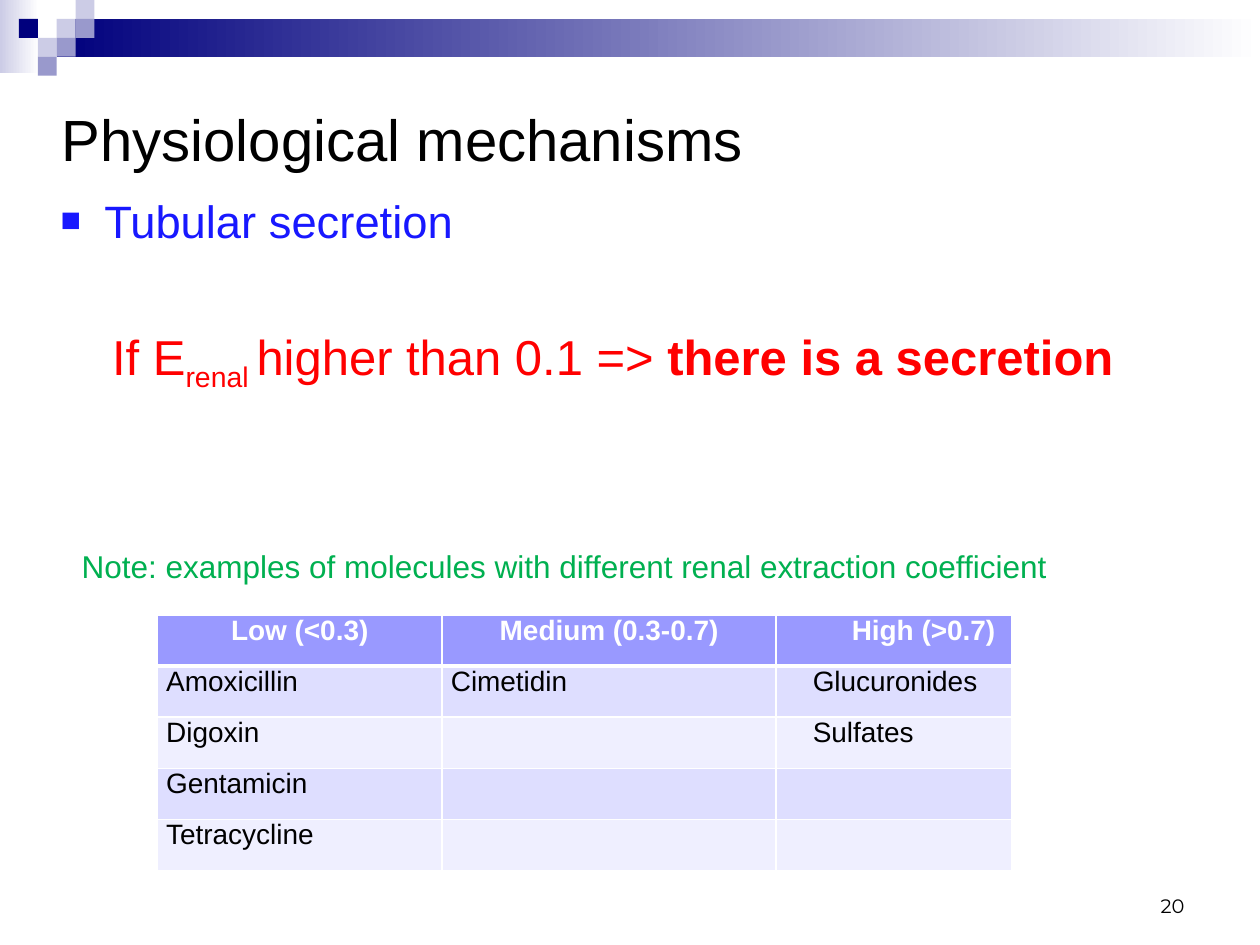
"""Build a slide on tubular secretion with a table of renal extraction examples."""
import dataclasses

import lxml.etree
import pptx
import pptx.dml.color
import pptx.enum.shapes
import pptx.enum.text
import pptx.oxml.ns
import pptx.util

Pt = pptx.util.Pt
Align = pptx.enum.text.PP_ALIGN
Anchor = pptx.enum.text.MSO_ANCHOR


@dataclasses.dataclass(frozen=True)
class Theme:
    font: str = "Arial"
    digit: str = "Montserrat"
    black: str = "000000"
    white: str = "FFFFFF"
    navy: str = "00007D"
    pale: str = "CCCCE6"
    mid: str = "9999CC"
    blue: str = "1818FF"
    red: str = "FF0000"
    green: str = "00B050"
    head: str = "9999FF"
    bands: tuple = ("DEDEFF", "EFEFFF")
    title: float = 33.2
    item: float = 25.9
    rule: float = 28
    note: float = 18
    cell: float = 16
    page: float = 11.1


THEME = Theme()
UNIT = 10.8
TILES = [
    (3, 1, THEME.pale), (4, 0, THEME.pale), (4, 1, THEME.mid),
    (2, 2, THEME.pale), (1, 1, THEME.navy), (3, 2, THEME.mid),
    (2, 3, THEME.mid),
]
ROWS = [
    ("Low (<0.3)", "Medium (0.3-0.7)", "High (>0.7)"),
    ("Amoxicillin", "Cimetidin", "Glucuronides"),
    ("Digoxin", "", "Sulfates"),
    ("Gentamicin", "", ""),
    ("Tetracycline", "", ""),
]
WIDTHS = (162.7, 190.8, 134.6)
HEIGHT = 29.2


def rgb(code):
    return pptx.dml.color.RGBColor.from_string(code)


def add_xml(parent, tag, **attrs):
    child = lxml.etree.SubElement(parent, pptx.oxml.ns.qn(tag))
    for name, value in attrs.items():
        child.set(name, str(value))
    return child


def style(para, size, color, face=THEME.font, bold=False, align=Align.LEFT):
    font = para.font
    font.name, font.size, font.bold = face, Pt(size), bold
    font.color.rgb = rgb(color)
    para.alignment = align


def place(shape, left, top, width, height, anchor=Anchor.TOP, wrap=True):
    shape.left, shape.top = Pt(left), Pt(top)
    shape.width, shape.height = Pt(width), Pt(height)
    frame = shape.text_frame
    frame.auto_size = pptx.enum.text.MSO_AUTO_SIZE.NONE
    frame.word_wrap, frame.vertical_anchor = wrap, anchor
    return frame.paragraphs[0]


def add_text(slide, *box, **options):
    return place(slide.shapes.add_textbox(0, 0, 0, 0), *box, **options)


def add_block(slide, left, top, width, height, *colors):
    kind = pptx.enum.shapes.MSO_SHAPE.RECTANGLE
    block = slide.shapes.add_shape(kind, Pt(left), Pt(top), Pt(width), Pt(height))
    block.shadow.inherit = False
    block.line.fill.background()
    if len(colors) == 1:
        block.fill.solid()
        block.fill.fore_color.rgb = rgb(colors[0])
    else:
        block.fill.gradient()
        block.fill.gradient_angle = 0
        for spot, (stop, color) in enumerate(zip(block.fill.gradient_stops, colors)):
            stop.position = spot
            stop.color.rgb = rgb(color)


def add_banner(slide):
    add_block(slide, 0, 0, 22.3, 41.8, THEME.pale, THEME.white)
    add_block(slide, 3 * UNIT, UNIT, 720 - 3 * UNIT, 2 * UNIT, THEME.navy, THEME.white)
    for col, row, color in TILES:
        add_block(slide, col * UNIT, row * UNIT, UNIT, UNIT, color)


def add_title(slide):
    para = place(slide.shapes.title, 28, 52, 660, 54, Anchor.MIDDLE)
    para.text = "Physiological mechanisms"
    style(para, THEME.title, THEME.black)


def add_list(slide):
    para = place(slide.placeholders[1], 27.4, 106.6, 363, 48)
    para.text = "Tubular secretion"
    style(para, THEME.item, THEME.blue)
    para.space_before = Pt(5.2)
    props = para._p.get_or_add_pPr()
    props.set("marL", str(Pt(25)))
    props.set("indent", str(Pt(-25)))
    add_xml(add_xml(props, "a:buClr"), "a:srgbClr", val=THEME.blue)
    add_xml(props, "a:buSzPct", val=75000)
    add_xml(props, "a:buFont", typeface=THEME.font)
    add_xml(props, "a:buChar", char="■")


def add_rule(slide):
    para = add_text(slide, 57, 183, 603, 41, wrap=False)
    style(para, THEME.rule, THEME.red)
    parts = ("If E", "renal ", "higher than 0.1 => ", "there is a secretion")
    runs = [para.add_run() for _ in parts]
    for run, part in zip(runs, parts):
        run.text = part
    runs[1]._r.get_or_add_rPr().set("baseline", "-25000")
    runs[3].font.bold = True


def add_note(slide):
    para = add_text(slide, 39.6, 273.6, 648, 99.4, anchor=Anchor.MIDDLE)
    para.text = "Note: examples of molecules with different renal extraction coefficient"
    style(para, THEME.note, THEME.green)


def add_page(slide):
    para = add_text(slide, 516, 492, 168, 36, anchor=Anchor.BOTTOM)
    para.text = "20"
    style(para, THEME.page, THEME.black, face=THEME.digit, align=Align.RIGHT)


def edge(cell, **sides):
    props = cell._tc.get_or_add_tcPr()
    for side, width in sides.items():
        line = add_xml(props, f"a:ln{side}", w=Pt(width))
        add_xml(add_xml(line, "a:solidFill"), "a:srgbClr", val=THEME.white)


def fill_cell(cell, text, row, col):
    head = row == 0
    edge(cell, L=1, R=1, T=3 if row == 1 else 1, B=3 if head else 1)
    cell.fill.solid()
    cell.fill.fore_color.rgb = rgb(THEME.head if head else THEME.bands[(row - 1) % 2])
    cell.margin_left = cell.margin_right = Pt(5)
    cell.margin_top = cell.margin_bottom = 0
    para = cell.text_frame.paragraphs[0]
    para.text = text
    style(para, THEME.cell, THEME.white if head else THEME.black,
          bold=head, align=Align.CENTER if head else Align.LEFT)
    if col == 2:
        para._p.get_or_add_pPr().set("marL", str(Pt(34 if head else 16)))


def add_grid(slide):
    frame = slide.shapes.add_table(len(ROWS), len(WIDTHS), Pt(90), Pt(351.4),
                                   Pt(sum(WIDTHS)), Pt(HEIGHT * len(ROWS)))
    table = frame.table
    for column, width in zip(table.columns, WIDTHS):
        column.width = Pt(width)
    for row, texts in enumerate(ROWS):
        table.rows[row].height = Pt(HEIGHT)
        for col, text in enumerate(texts):
            fill_cell(table.cell(row, col), text, row, col)


def main():
    deck = pptx.Presentation()
    deck.slide_width, deck.slide_height = Pt(720), Pt(540)
    slide = deck.slides.add_slide(deck.slide_layouts[1])
    for build in (add_banner, add_title, add_list, add_rule,
                  add_note, add_grid, add_page):
        build(slide)
    deck.save("out.pptx")


if __name__ == "__main__":
    main()
